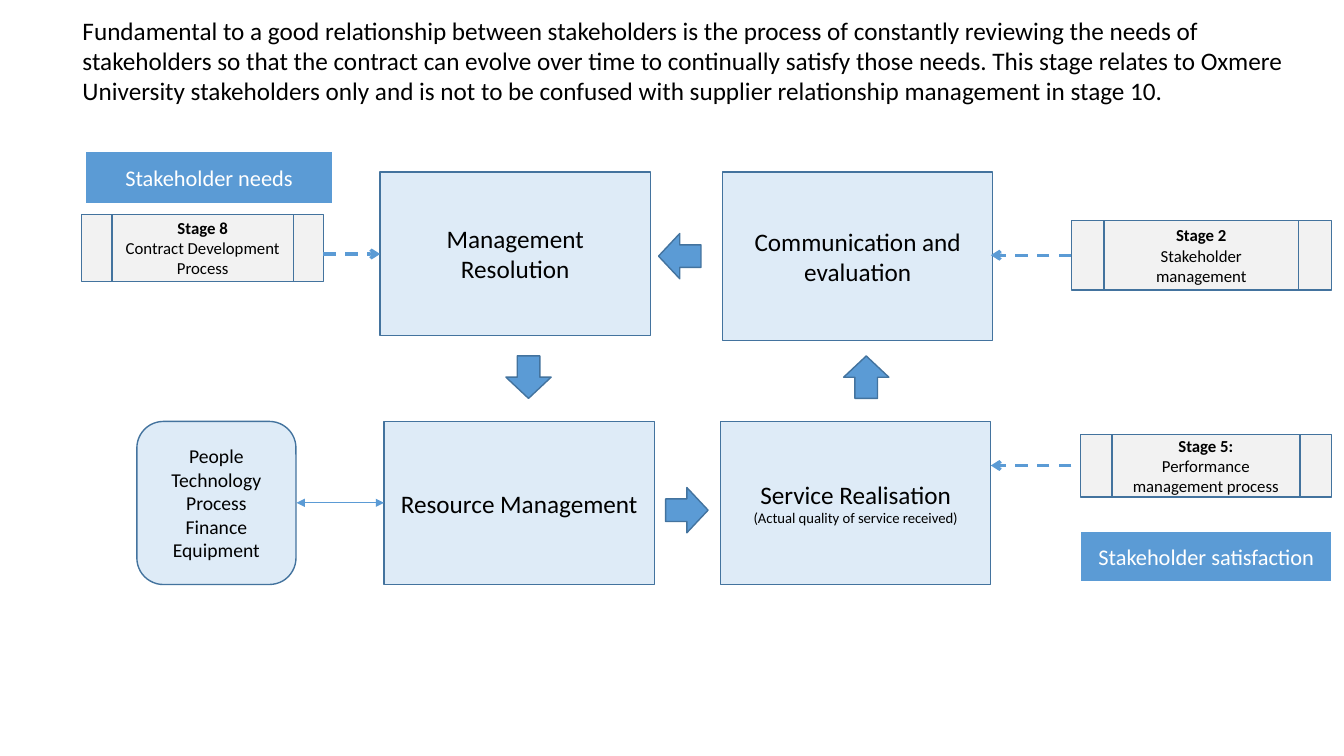
from lxml import etree
from pptx import Presentation
from pptx.dml.color import RGBColor
from pptx.enum.dml import MSO_LINE
from pptx.enum.shapes import MSO_CONNECTOR, MSO_SHAPE
from pptx.enum.text import MSO_ANCHOR, PP_ALIGN
from pptx.oxml.ns import qn
from pptx.util import Cm, Pt

COLORS = {
    "blue": "5B9BD5",
    "outline": "43739E",
    "pale": "DEEBF7",
    "grey": "F2F2F2",
    "black": "000000",
    "white": "FFFFFF",
}


def add_box(kind, place, fill, outlined=True):
    box = page.shapes.add_shape(kind, *[Cm(length) for length in place])
    box.shadow.inherit = False
    box.fill.solid()
    box.fill.fore_color.rgb = RGBColor.from_string(COLORS[fill])
    if outlined:
        box.line.color.rgb = RGBColor.from_string(COLORS["outline"])
        box.line.width = Pt(1)
    else:
        box.line.fill.background()
    return box


def write(box, lines, color="black", align=PP_ALIGN.CENTER):
    """Fill a box with one paragraph per (text, size, bold) line."""
    frame = box.text_frame
    frame.word_wrap = True
    for index, (text, size, bold) in enumerate(lines):
        para = frame.add_paragraph() if index else frame.paragraphs[0]
        para.alignment = align
        span = para.add_run()
        span.text = text
        span.font.name = "Calibri"
        span.font.size = Pt(size)
        span.font.bold = bold
        span.font.color.rgb = RGBColor.from_string(COLORS[color])


deck = Presentation()
deck.slide_width = Cm(33.87)
deck.slide_height = Cm(19.05)
page = deck.slides.add_slide(deck.slide_layouts[6])

# Introduction
intro = page.shapes.add_textbox(Cm(1.83), Cm(0.25), Cm(30.99), Cm(2.57))
intro_text = (
    "Fundamental to a good relationship between stakeholders is the process of "
    "constantly reviewing the needs of stakeholders so that the contract can evolve "
    "over time to continually satisfy those needs. This stage relates to Oxmere "
    "University stakeholders only and is not to be confused with supplier "
    "relationship management in stage 10."
)
write(intro, [(intro_text, 18, False)], align=PP_ALIGN.LEFT)

# Start and end labels
for text, place in [
    ("Stakeholder needs", (2.16, 3.84, 6.22, 1.27)),
    ("Stakeholder satisfaction", (27.25, 13.41, 6.3, 1.24)),
]:
    label = add_box(MSO_SHAPE.FLOWCHART_PROCESS, place, "blue", outlined=False)
    label.text_frame.vertical_anchor = MSO_ANCHOR.MIDDLE
    write(label, [(text, 16, False)], "white")

# Four steps of the cycle
STEP_WIDTH, STEP_HEIGHT, LOWER_TOP = 6.81, 4.11, 10.62
for title, note, left, top, height in [
    ("Management Resolution", None, 9.58, 4.34, STEP_HEIGHT),
    ("Communication and evaluation", None, 18.21, 4.34, 4.24),
    ("Resource Management", None, 9.68, LOWER_TOP, STEP_HEIGHT),
    ("Service Realisation", "(Actual quality of service received)", 18.16, LOWER_TOP, STEP_HEIGHT),
]:
    step = add_box(MSO_SHAPE.FLOWCHART_PROCESS, (left, top, STEP_WIDTH, height), "pale")
    step.text_frame.vertical_anchor = MSO_ANCHOR.MIDDLE
    write(step, [(title, 18, False)] + ([(note, 10.5, False)] if note else []))

# Resources
resources = add_box(MSO_SHAPE.ROUNDED_RECTANGLE, (3.45, LOWER_TOP, 4.01, STEP_HEIGHT), "pale")
resources.text_frame.vertical_anchor = MSO_ANCHOR.MIDDLE
names = ["People", "Technology", "Process", "Finance", "Equipment"]
write(resources, [(name, 14, False) for name in names])

# Related stages
for stage, process, place in [
    ("Stage 8", "Contract Development Process", (2.06, 5.41, 6.1, 1.68)),
    ("Stage 2", "Stakeholder management", (27, 5.56, 6.55, 1.75)),
    ("Stage 5:", "Performance management process", (27.23, 10.95, 6.32, 1.57)),
]:
    related = add_box(MSO_SHAPE.FLOWCHART_PREDEFINED_PROCESS, place, "grey")
    related.text_frame.vertical_anchor = MSO_ANCHOR.MIDDLE
    write(related, [(stage, 12, True), (process, 12, False)])

# Block arrows around the cycle
for left, top, rotation in [
    (16.56, 5.92, 90),
    (21.26, 8.97, 180),
    (16.74, 12.32, 270),
    (12.75, 8.97, 0),
]:
    arrow = add_box(MSO_SHAPE.DOWN_ARROW, (left, top, 1.14, 1.07), "blue")
    arrow.rotation = rotation

# Links into the cycle: dashed one way, thin both ways
for start, end, y, both_ways in [
    (8.15, 9.58, 6.4, False),
    (27, 24.97, 6.43, False),
    (27, 24.97, 11.73, False),
    (7.47, 9.68, 12.67, True),
]:
    link = page.shapes.add_connector(MSO_CONNECTOR.STRAIGHT, Cm(start), Cm(y), Cm(end), Cm(y))
    link.line.color.rgb = RGBColor.from_string(COLORS["blue"])
    link.line.width = Pt(0.5 if both_ways else 2.25)
    if not both_ways:
        link.line.dash_style = MSO_LINE.DASH
    outline = link.line._get_or_add_ln()
    for tag in ["a:headEnd", "a:tailEnd"] if both_ways else ["a:tailEnd"]:
        etree.SubElement(outline, qn(tag), type="triangle" if both_ways else "arrow")
    etree.SubElement(link._element.spPr, qn("a:effectLst"))

deck.save("out.pptx")
